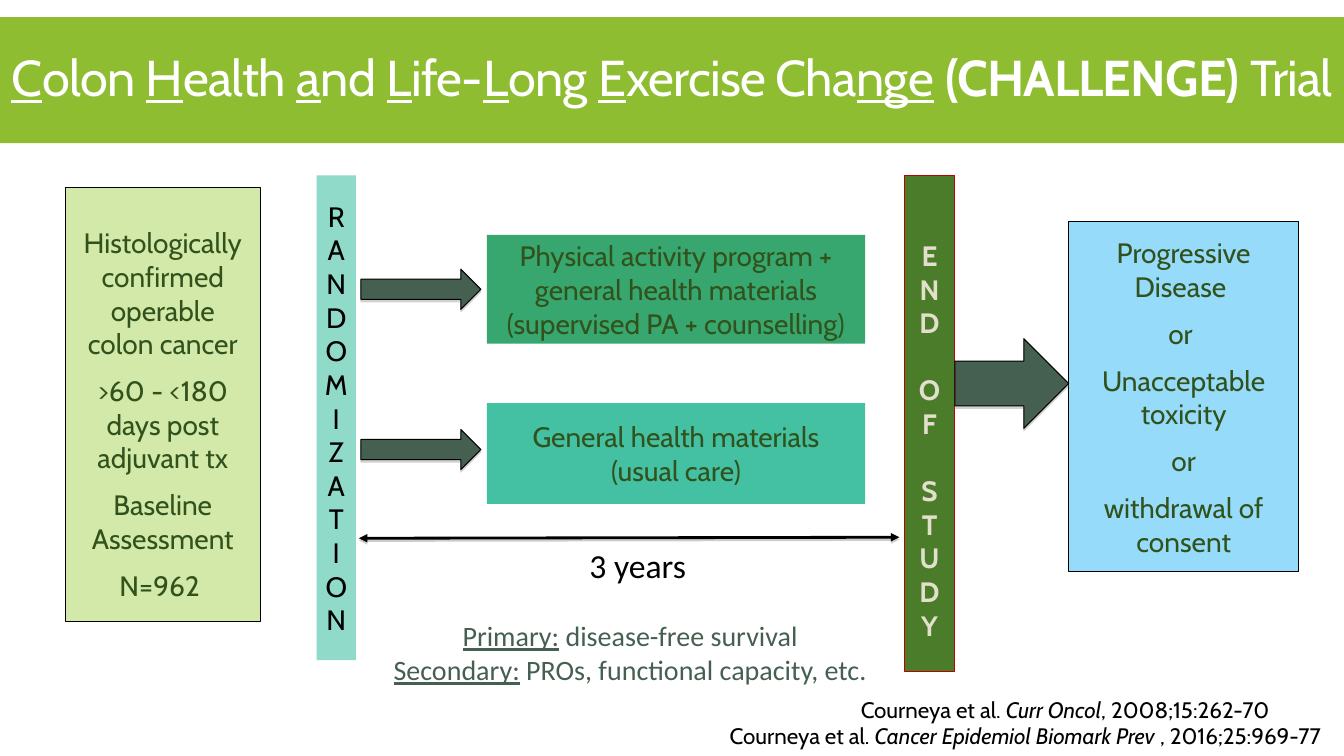
from lxml.etree import SubElement
from pptx import Presentation
from pptx.dml.color import RGBColor
from pptx.enum.shapes import MSO_CONNECTOR, MSO_SHAPE
from pptx.enum.text import MSO_ANCHOR, MSO_AUTO_SIZE, PP_ALIGN
from pptx.oxml.ns import qn
from pptx.util import Inches, Pt

DARK_GREEN = "31521C"
SLATE = "455F51"
BLACK = "000000"


def color(hex_value):
    return RGBColor.from_string(hex_value)


def write(shape, paragraphs, size=20, font="Cabin", ink=DARK_GREEN,
          align=PP_ALIGN.CENTER, anchor=MSO_ANCHOR.MIDDLE, gap=0, gaps=None,
          side=0.1, top=0.05, line_spacing=None, tracking=None):
    """Each paragraph is a string or a list of (text, style letters b, i, u)."""
    frame = shape.text_frame
    frame.word_wrap = True
    frame.auto_size = MSO_AUTO_SIZE.NONE
    frame.vertical_anchor = anchor
    frame.margin_left = frame.margin_right = Inches(side)
    frame.margin_top, frame.margin_bottom = Inches(top), Inches(0.05)
    for index, content in enumerate(paragraphs):
        paragraph = frame.add_paragraph() if index else frame.paragraphs[0]
        paragraph.alignment = align
        paragraph.space_before = Pt((gaps or {}).get(index, gap if index else 0))
        if line_spacing:
            paragraph.line_spacing = line_spacing
        runs = [(content, "")] if isinstance(content, str) else content
        for text, style in runs:
            run = paragraph.add_run()
            run.text = text
            run.font.size = Pt(size)
            run.font.name = font
            run.font.color.rgb = color(ink)
            run.font.bold = "b" in style
            run.font.italic = "i" in style
            run.font.underline = "u" in style
            if tracking:
                run.font._element.set("spc", str(round(tracking * 100)))


def drop_shadow(effects, distance, opacity):
    shadow = SubElement(effects, qn("a:outerShdw"), blurRad="0",
                        dist=str(Pt(distance)), dir="5400000", rotWithShape="0")
    tint = SubElement(shadow, qn("a:srgbClr"), val="808080")
    SubElement(tint, qn("a:alpha"), val=str(opacity * 1000))


def add_block(slide, box, fill, outline=None, kind=MSO_SHAPE.RECTANGLE):
    block = slide.shapes.add_shape(kind, *map(Inches, box))
    block.shadow.inherit = False
    block.fill.solid()
    block.fill.fore_color.rgb = color(fill)
    if outline:
        block.line.color.rgb = color(outline)
        block.line.width = Pt(0.75)
    else:
        block.line.fill.background()
    return block


def add_flow_arrow(slide, box):
    arrow = add_block(slide, box, SLATE, BLACK, MSO_SHAPE.RIGHT_ARROW)
    drop_shadow(arrow._element.spPr.find(qn("a:effectLst")), 1.8, 35)


def add_label(slide, box, paragraphs, **text_format):
    label = slide.shapes.add_textbox(*map(Inches, box))
    write(label, paragraphs, **text_format)


def add_duration_line(slide, start, end):
    span = slide.shapes.add_connector(MSO_CONNECTOR.STRAIGHT,
                                      *map(Inches, start + end))
    span.line.color.rgb = color(BLACK)
    span.line.width = Pt(2)
    for arrowhead in ("a:headEnd", "a:tailEnd"):
        SubElement(span.line._get_or_add_ln(), qn(arrowhead), type="triangle")
    drop_shadow(SubElement(span._element.spPr, qn("a:effectLst")), 1.6, 38)


def add_title(slide):
    title = slide.shapes.title
    title.left, title.top = Inches(0), Inches(0.17)
    title.width, title.height = Inches(13.33), Inches(1.25)
    title.fill.solid()
    title.fill.fore_color.rgb = color("8EBD31")
    write(title, [[
        ("C", "u"), ("olon ", ""), ("H", "u"), ("ealth ", ""), ("a", "u"),
        ("nd ", ""), ("L", "u"), ("ife-", ""), ("L", "u"), ("ong ", ""),
        ("E", "u"), ("xercise Cha", ""), ("nge", "u"), (" ", ""),
        ("(CHALLENGE) ", "b"), ("Trial", ""),
    ]], size=36, ink="FFFFFF", side=0.05, line_spacing=0.9, tracking=-0.6)


def main():
    deck = Presentation()
    deck.slide_width, deck.slide_height = Inches(13.33), Inches(7.5)
    slide = deck.slides.add_slide(deck.slide_layouts[5])
    add_title(slide)

    # Eligibility and end points
    eligibility = add_block(slide, (0.65, 1.86, 1.93, 4.31), "D3E9A9", BLACK)
    write(eligibility, [
        "Histologically confirmed operable colon cancer",
        ">60 - <180 days post adjuvant tx", "Baseline Assessment", "N=962 ",
    ], anchor=MSO_ANCHOR.TOP, gap=9.5, top=0.38)
    end_points = add_block(slide, (10.6, 2.2, 2.28, 3.47), "97DBFB", BLACK)
    write(end_points, ["Progressive Disease ", "or ", "Unacceptable toxicity",
                       "or", "withdrawal of consent"], gap=9.5)

    # Vertical bars, one letter a line
    randomization = add_block(slide, (3.14, 1.74, 0.39, 4.81), "8FDAC8")
    write(randomization, list("RANDOMIZATION"), ink=BLACK, side=0.07)
    end_of_study = add_block(slide, (8.97, 1.74, 0.5, 4.92), "4A7C29", "C00000")
    write(end_of_study, [[(letter, "b")] for letter in "ENDOFSTUDY"],
          ink="E2DFCC", side=0.07, top=0.38, gaps={3: 24, 5: 24})

    # Study arms
    activity_arm = add_block(slide, (4.83, 2.33, 3.75, 1.08), "37A76F")
    write(activity_arm, ["Physical activity program + general health materials "
                         "(supervised PA + counselling)"])
    usual_care_arm = add_block(slide, (4.83, 4, 3.75, 1), "44C1A3")
    write(usual_care_arm, ["General health materials", "(usual care)"])

    # Flow arrows
    for box in ((3.58, 2.67, 1.19, 0.4), (3.58, 4.26, 1.19, 0.4),
                (9.47, 3.36, 1.13, 0.89)):
        add_flow_arrow(slide, box)

    # Duration and outcomes
    add_duration_line(slide, (3.56, 5.34), (8.92, 5.33))
    add_label(slide, (5.49, 5.36, 1.67, 0.5), ["3 years"], size=24,
              font="Calibri", ink=BLACK, anchor=MSO_ANCHOR.TOP)
    add_label(slide, (3.71, 6.09, 5.08, 0.77), [
        [("Primary:", "u"), (" disease-free survival", "")],
        [("Secondary:", "u"), (" PROs, functional capacity, etc.", "")],
    ], font="Calibri", ink=SLATE, anchor=MSO_ANCHOR.TOP)

    # References
    for right, top, journal, issue in (
            (12.69, 6.85, "Curr Oncol", ", 2008;15:262-70"),
            (13.2, 7.11, "Cancer Epidemiol Biomark Prev ", ", 2016;25:969-77")):
        add_label(slide, (right - 6.88, top, 6.88, 0.37),
                  [[("Courneya et al. ", ""), (journal, "i"), (issue, "")]],
                  size=16, ink=BLACK, align=PP_ALIGN.RIGHT)

    deck.save("out.pptx")


if __name__ == "__main__":
    main()
